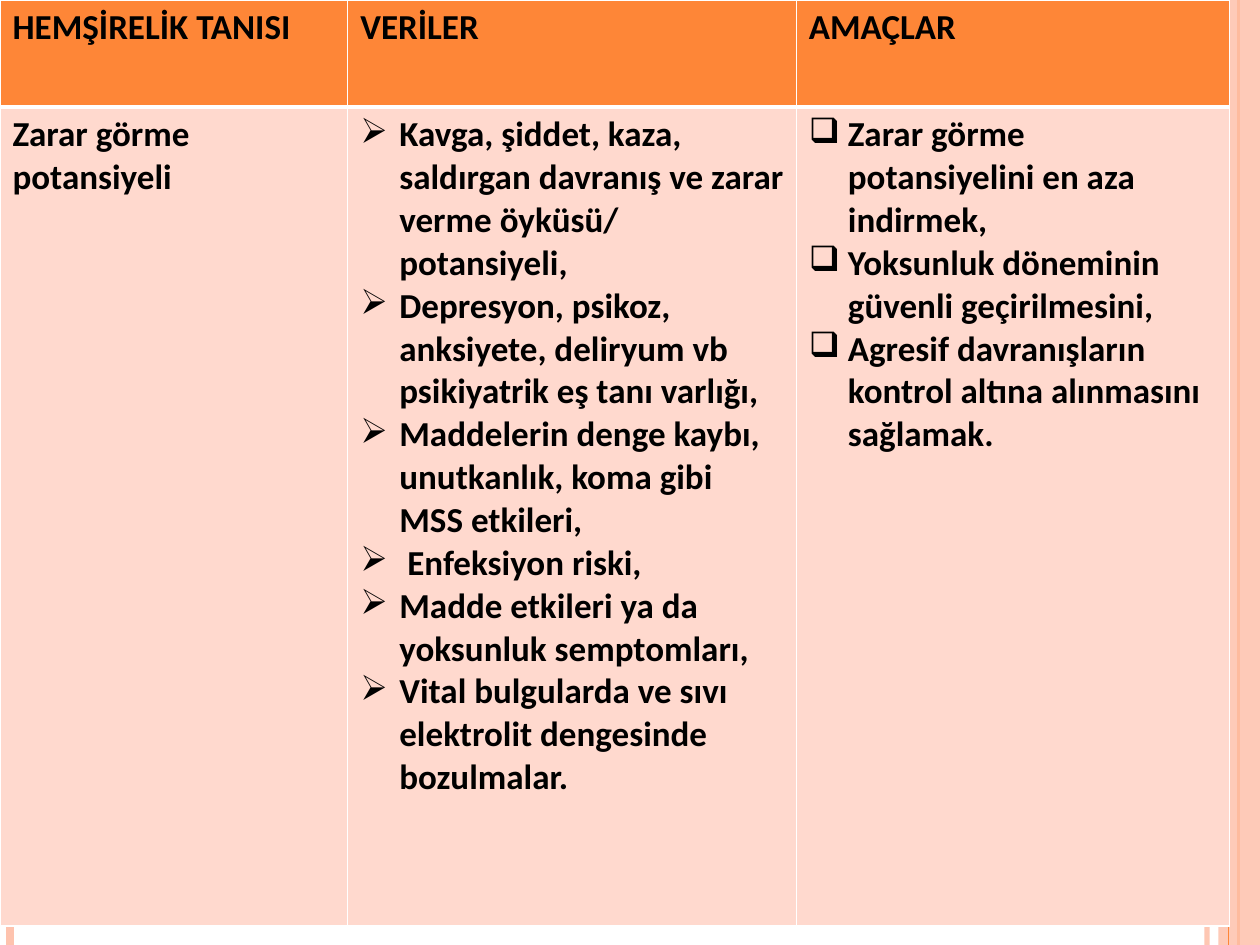
from lxml.etree import SubElement
from pptx import Presentation
from pptx.dml.color import RGBColor
from pptx.enum.shapes import MSO_CONNECTOR, MSO_SHAPE
from pptx.oxml.ns import qn
from pptx.util import Emu, Inches, Pt

WIDTH, HEIGHT = Inches(10), Inches(7.5)
ORANGE = RGBColor(0xFE, 0x86, 0x37)
PEACH = RGBColor(0xFE, 0xC3, 0xAE)
PALE = RGBColor(0xFF, 0xD9, 0xCE)
BLACK = RGBColor(0, 0, 0)
WHITE = RGBColor(0xFF, 0xFF, 0xFF)

COLUMNS = (2.76, 3.56, 3.44)
ROWS = (0.85, 6.5)
HANGING = Inches(0.31)

HEADINGS = ("HEMŞİRELİK TANISI", "VERİLER", "AMAÇLAR")
DIAGNOSIS = ("Zarar görme potansiyeli",)
FINDINGS = (
    "Kavga, şiddet, kaza, saldırgan davranış ve zarar verme öyküsü/ potansiyeli,",
    "Depresyon, psikoz, anksiyete, deliryum vb psikiyatrik eş tanı varlığı,",
    "Maddelerin denge kaybı, unutkanlık, koma gibi MSS etkileri,",
    " Enfeksiyon riski,",
    "Madde etkileri ya da yoksunluk semptomları,",
    "Vital bulgularda ve sıvı elektrolit dengesinde bozulmalar.",
)
GOALS = (
    "Zarar görme potansiyelini en aza indirmek,",
    "Yoksunluk döneminin güvenli geçirilmesini,",
    "Agresif davranışların kontrol altına alınmasını sağlamak.",
)


def set_opacity(fill, percent):
    color = fill._xPr.find(qn("a:solidFill"))[0]
    SubElement(color, qn("a:alpha"), val=str(percent * 1000))


def add_rule(page, share, color, weight, opacity=100):
    """Draw a full-height vertical line at a share of the slide's width."""
    x = Emu(int(WIDTH * share))
    rule = page.shapes.add_connector(MSO_CONNECTOR.STRAIGHT, x, 0, x, HEIGHT)
    rule.line.width = Pt(weight)
    rule.line.color.rgb = color
    if opacity < 100:
        set_opacity(rule.line.fill, opacity)
    SubElement(rule._element.spPr, qn("a:effectLst"))


def add_band(page, share):
    """Fill the slide from a share of its width to the right edge."""
    left = Emu(int(WIDTH * share))
    band = page.shapes.add_shape(MSO_SHAPE.RECTANGLE, left, 0, WIDTH - left, HEIGHT)
    band.shadow.inherit = False
    band.line.fill.background()
    band.fill.solid()
    band.fill.fore_color.rgb = PEACH
    set_opacity(band.fill, 87)


def add_bullet(para, symbol):
    properties = para._p.get_or_add_pPr()
    properties.set("marL", str(HANGING))
    properties.set("indent", str(-HANGING))
    SubElement(properties, qn("a:buChar"), char=symbol)


def set_borders(cell, **weights):
    properties = cell._tc.get_or_add_tcPr()
    for side in "LRTB":
        width = str(Pt(weights.get(side, 1)))
        border = SubElement(properties, qn(f"a:ln{side}"), w=width)
        fill = SubElement(border, qn("a:solidFill"))
        SubElement(fill, qn("a:srgbClr"), val=str(WHITE))


def fill_cell(cell, texts, color, bullet=None, **borders):
    set_borders(cell, **borders)
    cell.fill.solid()
    cell.fill.fore_color.rgb = color
    frame = cell.text_frame
    for index, text in enumerate(texts):
        para = frame.add_paragraph() if index else frame.paragraphs[0]
        if bullet:
            add_bullet(para, bullet)
        span = para.add_run()
        span.text = text
        span.font.name = "Calibri"
        span.font.size = Pt(20)
        span.font.bold = True
        span.font.color.rgb = BLACK


def add_care_table(page):
    frame = page.shapes.add_table(len(ROWS), len(COLUMNS), 0, 0,
                                  Inches(sum(COLUMNS)), Inches(sum(ROWS)))
    table = frame.table
    table.horz_banding = False
    for column, width in zip(table.columns, COLUMNS):
        column.width = Inches(width)
    for row, height in zip(table.rows, ROWS):
        row.height = Inches(height)

    bodies = ((DIAGNOSIS, None), (FINDINGS, "➢"), (GOALS, "❑"))
    for index, (heading, (texts, bullet)) in enumerate(zip(HEADINGS, bodies)):
        fill_cell(table.cell(0, index), [heading], ORANGE, B=3)
        fill_cell(table.cell(1, index), texts, PALE, bullet, T=3)


def main():
    deck = Presentation()
    deck.slide_width, deck.slide_height = WIDTH, HEIGHT
    page = deck.slides.add_slide(deck.slide_layouts[6])

    # Decorative edges
    add_rule(page, 0.958, PEACH, 3, opacity=93)
    add_rule(page, 0.008, PEACH, 4.5)
    add_rule(page, 0.983, ORANGE, 1.5)
    add_band(page, 0.967)
    add_rule(page, 0.975, ORANGE, 0.75)

    # Care plan
    add_care_table(page)
    deck.save("out.pptx")


if __name__ == "__main__":
    main()
